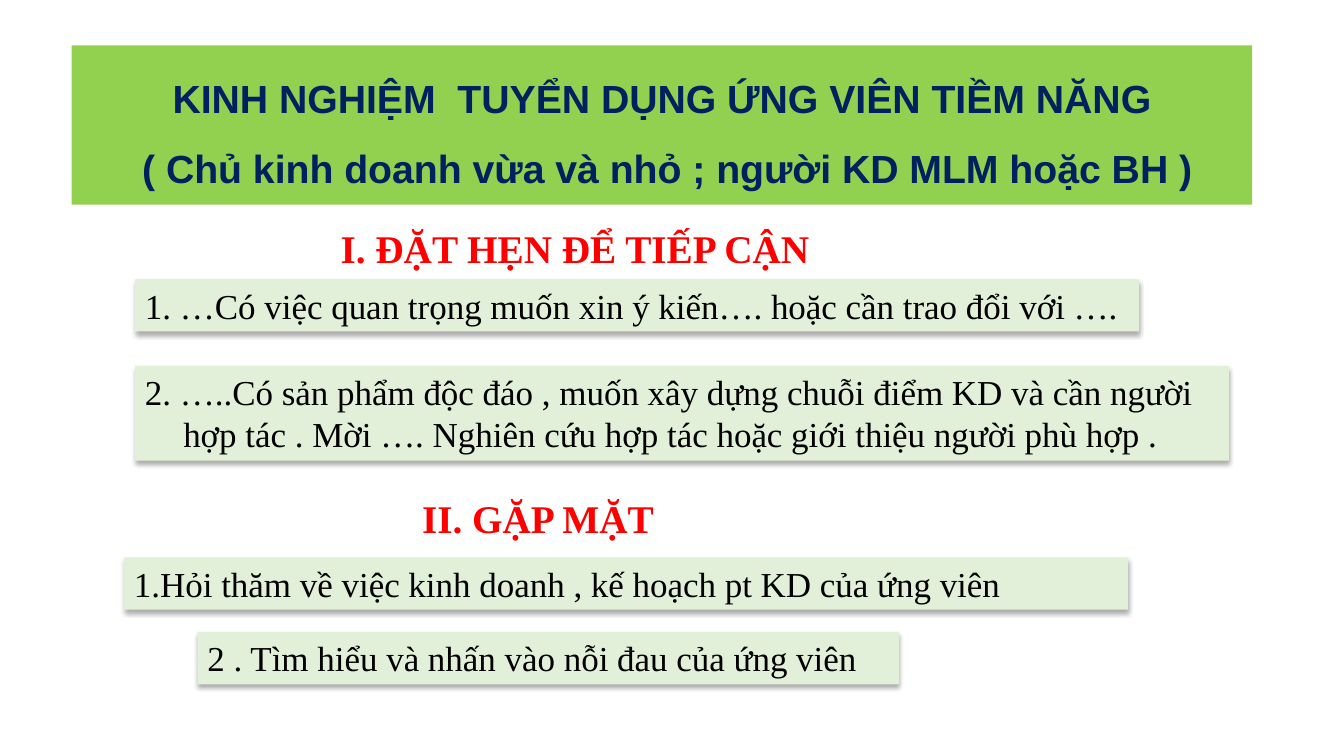
import pptx
import pptx.util
import pptx.dml.color
import pptx.enum.shapes
import pptx.enum.text
import pptx.oxml
import pptx.oxml.ns

COLORS = {"band": "92D050", "title": "002060", "heading": "FF0000",
          "box": "E2F0D9", "text": "000000", "shadow": "000000"}
Inches, Pt = pptx.util.Inches, pptx.util.Pt
RGB = pptx.dml.color.RGBColor.from_string
ALIGN = pptx.enum.text.PP_ALIGN
FIT = pptx.enum.text.MSO_AUTO_SIZE

presentation = pptx.Presentation()
presentation.slide_width = Inches(13.33)
presentation.slide_height = Inches(7.5)
slide = presentation.slides.add_slide(presentation.slide_layouts[5])

# Grid of 100 columns by 100 rows
COLUMN = presentation.slide_width / 100
ROW = presentation.slide_height / 100


def place(left, top, width, height):
    return [round(left * COLUMN), round(top * ROW),
            round(width * COLUMN), round(height * ROW)]


def write(shape, text, size=25, font="Times New Roman", color="text", bold=False,
          align=ALIGN.LEFT, spacing=1.0, hanging=0, fit=FIT.SHAPE_TO_FIT_TEXT,
          anchor=pptx.enum.text.MSO_ANCHOR.TOP):
    frame = shape.text_frame
    frame.text = text
    frame.word_wrap = True
    frame.auto_size = fit
    frame.vertical_anchor = anchor
    for paragraph in frame.paragraphs:
        paragraph.alignment = align
        paragraph.line_spacing = spacing
        paragraph.space_before = Pt(0)
        if hanging:
            properties = paragraph._p.get_or_add_pPr()
            properties.set("marL", str(Inches(hanging)))
            properties.set("indent", str(-Inches(hanging)))
        for run in paragraph.runs:
            run.font.name = font
            run.font.size = Pt(size)
            run.font.bold = bold
            run.font.color.rgb = RGB(COLORS[color])


# Title band
title = slide.shapes.title
title.left, title.top, title.width, title.height = place(5.33, 6, 87.83, 21.07)
title.fill.solid()
title.fill.fore_color.rgb = RGB(COLORS["band"])
write(title, "KINH NGHIỆM  TUYỂN DỤNG ỨNG VIÊN TIỀM NĂNG\n"
      " ( Chủ kinh doanh vừa và nhỏ ; người KD MLM hoặc BH )",
      size=28, font="Arial", color="title", bold=True, align=ALIGN.CENTER,
      spacing=1.5, fit=FIT.NONE, anchor=pptx.enum.text.MSO_ANCHOR.BOTTOM)
for side in ("left", "top", "right", "bottom"):
    setattr(title.text_frame, f"margin_{side}", Inches(0.13))

# Section headings
headings = [
    ("I. ĐẶT HẸN ĐỂ TIẾP CẬN  ", 7.8, 29.07, 71.4),
    ("II. GẶP MẶT  ", 26.63, 64.67, 28.2),
]
for text, left, top, width in headings:
    heading = slide.shapes.add_textbox(*place(left, top, width, 7.6))
    write(heading, text, size=28, color="heading", bold=True, align=ALIGN.CENTER)

# Shadowed step boxes
steps = [
    ("1. …Có việc quan trọng muốn xin ý kiến…. hoặc cần trao đổi với ….",
     10.05, 36.93, 74.7, 6.93),
    ("2. …..Có sản phẩm độc đáo , muốn xây dựng chuỗi điểm KD và cần người "
     "hợp tác . Mời …. Nghiên cứu hợp tác hoặc giới thiệu người phù hợp .",
     10.05, 48.4, 81.38, 12.53),
    ("1.Hỏi thăm về việc kinh doanh , kế hoạch pt KD của ứng viên",
     9.23, 73.73, 74.7, 6.93),
    ("2 . Tìm hiểu và nhấn vào nỗi đau của ứng viên",
     14.7, 83.6, 52.2, 6.93),
]
for text, *cell in steps:
    step = slide.shapes.add_shape(
        pptx.enum.shapes.MSO_SHAPE.RECTANGLE, *place(*cell))
    step.fill.solid()
    step.fill.fore_color.rgb = RGB(COLORS["box"])
    step.line.fill.background()
    step.shadow.inherit = False
    effects = step._element.spPr.find(pptx.oxml.ns.qn("a:effectLst"))
    effects.append(pptx.oxml.parse_xml(
        f'<a:outerShdw {pptx.oxml.ns.nsdecls("a")} blurRad="{Pt(3.5)}" '
        f'dist="{Pt(2.2)}" dir="5400000" algn="t" rotWithShape="0">'
        f'<a:srgbClr val="{COLORS["shadow"]}"><a:alpha val="32000"/></a:srgbClr>'
        '</a:outerShdw>'))
    write(step, text, hanging=0.38)

presentation.save("out.pptx")
